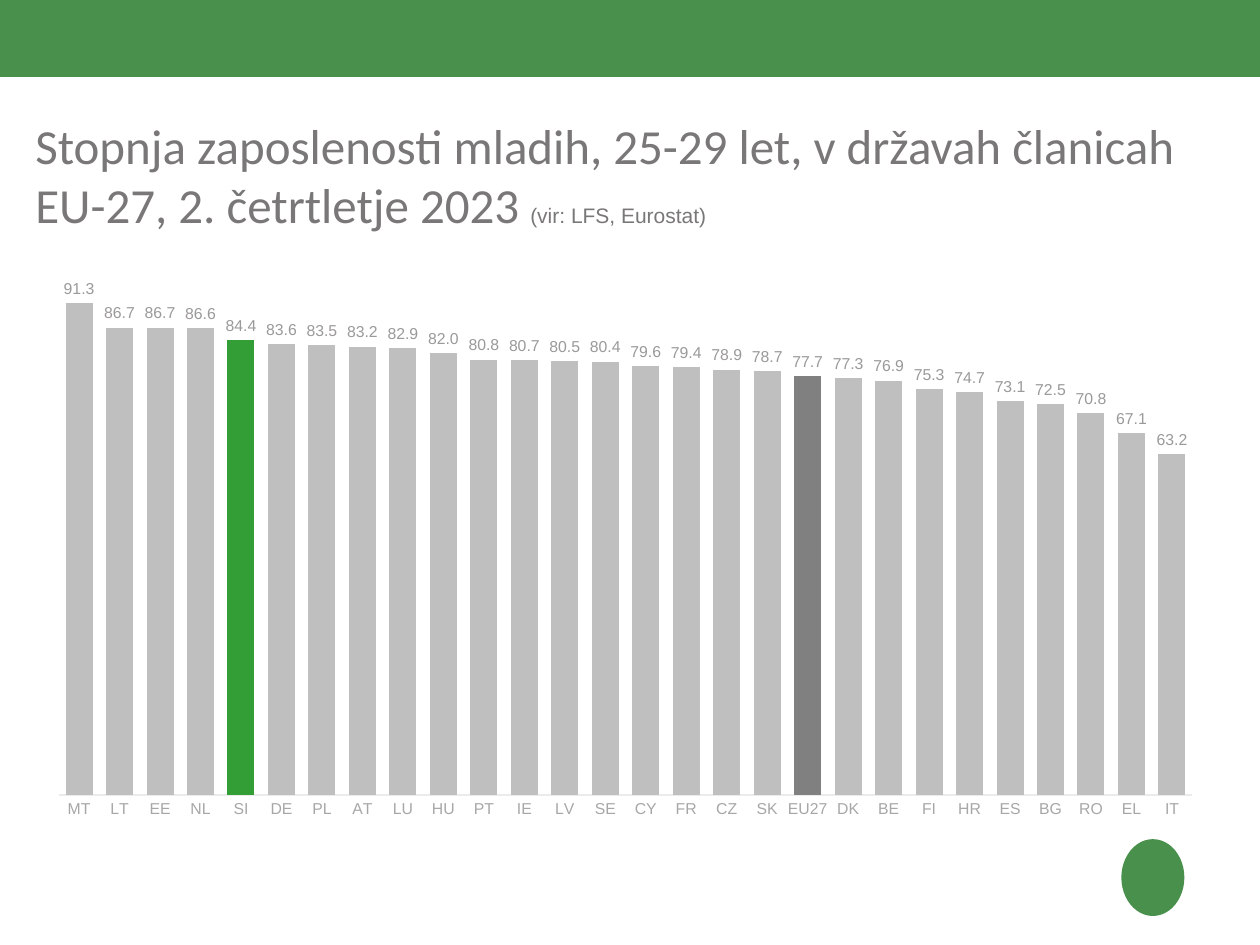
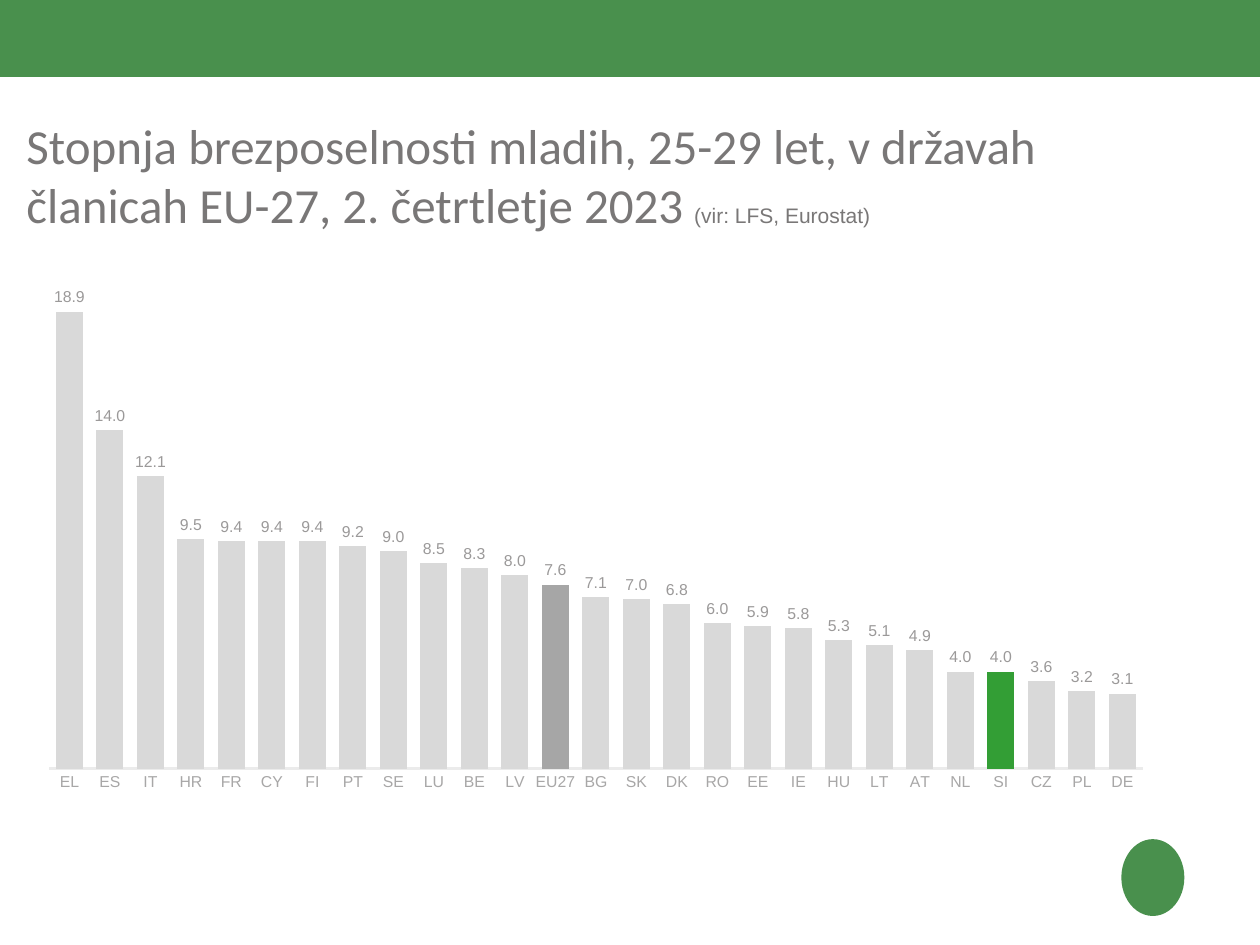
"""Build two slides on youth employment and unemployment rates in the EU-27."""
from lxml import etree
from pptx import Presentation
from pptx.chart.data import CategoryChartData
from pptx.dml.color import RGBColor
from pptx.enum.chart import XL_CHART_TYPE as ChartType
from pptx.enum.chart import XL_LABEL_POSITION as LabelPosition
from pptx.enum.chart import XL_TICK_LABEL_POSITION as TickLabels
from pptx.enum.chart import XL_TICK_MARK as TickMark
from pptx.enum.shapes import MSO_SHAPE as Shape
from pptx.enum.text import MSO_ANCHOR as Anchor
from pptx.enum.text import MSO_AUTO_SIZE as AutoSize
from pptx.enum.text import PP_ALIGN as Align
from pptx.oxml import parse_xml
from pptx.oxml.ns import nsdecls, qn
from pptx.util import Inches, Pt

COLORS = {
    "brand": "49904D",
    "text": "797777",
    "value": "9B9999",
    "country": "A8A7A7",
    "baseline": "EBEBEB",
    "slovenia": "339E35",
}
RATE_FORMAT = "#,##0.0"
SOURCE = "(vir: LFS, Eurostat)"
BAND_AREA = (0, 0, 100, 8.13)
EMBLEM_AREA = (89, 88.8, 5, 8.13)
PLOT_AREA = {"x": 0.02, "y": 0.02, "w": 0.96, "h": 0.92}

TITLE_FRAME = {
    "margin_left": 0, "margin_right": 0, "margin_top": 0, "margin_bottom": 0,
    "word_wrap": True, "auto_size": AutoSize.NONE, "vertical_anchor": Anchor.TOP,
}
COLUMNS = {"gap_width": 50, "overlap": -27, "vary_by_categories": False}
RATE_LABELS = {
    "show_value": True, "number_format": RATE_FORMAT,
    "number_format_is_linked": False, "position": LabelPosition.OUTSIDE_END,
}
PLAIN_AXIS = {
    "major_tick_mark": TickMark.NONE, "minor_tick_mark": TickMark.NONE,
    "has_major_gridlines": False,
}
RATE_AXIS = PLAIN_AXIS | {
    "minimum_scale": 0, "tick_label_position": TickLabels.NONE,
}

TOPICS = [
    {
        "title": "Stopnja zaposlenosti mladih, 25-29 let, v državah članicah "
                 "EU-27, 2. četrtletje 2023 ",
        "title_area": (2.8, 12.27, 92.6, 9.47),
        "chart_area": (2.8, 25.87, 93.7, 62),
        "top_rate": 100,
        "member": "BFBFBF",
        "average": "808080",
        "rates": {
            "MT": 91.3, "LT": 86.7, "EE": 86.7, "NL": 86.6, "SI": 84.4,
            "DE": 83.6, "PL": 83.5, "AT": 83.2, "LU": 82.9, "HU": 82.0,
            "PT": 80.8, "IE": 80.7, "LV": 80.5, "SE": 80.4, "CY": 79.6,
            "FR": 79.4, "CZ": 78.9, "SK": 78.7, "EU27": 77.7, "DK": 77.3,
            "BE": 76.9, "FI": 75.3, "HR": 74.7, "ES": 73.1, "BG": 72.5,
            "RO": 70.8, "EL": 67.1, "IT": 63.2,
        },
    },
    {
        "title": "Stopnja brezposelnosti mladih, 25-29 let, v državah članicah "
                 "EU-27, 2. četrtletje 2023 ",
        "title_area": (2.1, 12.27, 92.6, 9.47),
        "chart_area": (2.1, 29.07, 90.4, 55.6),
        "top_rate": 20,
        "member": "D9D9D9",
        "average": "A6A6A6",
        "rates": {
            "EL": 18.9, "ES": 14.0, "IT": 12.1, "HR": 9.5, "FR": 9.4,
            "CY": 9.4, "FI": 9.4, "PT": 9.2, "SE": 9.0, "LU": 8.5,
            "BE": 8.3, "LV": 8.0, "EU27": 7.6, "BG": 7.1, "SK": 7.0,
            "DK": 6.8, "RO": 6.0, "EE": 5.9, "IE": 5.8, "HU": 5.3,
            "LT": 5.1, "AT": 4.9, "NL": 4.0, "SI": 4.0, "CZ": 3.6,
            "PL": 3.2, "DE": 3.1,
        },
    },
]

deck = Presentation()
deck.slide_width, deck.slide_height = Inches(10), Inches(7.5)
column, row = deck.slide_width / 100, deck.slide_height / 100


def place(area):
    """Turn percentages of the slide into left, top, width and height."""
    return [round(share * unit) for share, unit in zip(area, (column, row) * 2)]


def style(target, formats, color=None):
    """Set every format value, and the colour of a font if one is given."""
    for attribute, value in formats.items():
        setattr(target, attribute, value)
    if color:
        target.color.rgb = RGBColor.from_string(color)


for topic in TOPICS:
    slide = deck.slides.add_slide(deck.slide_layouts[5])

    for outline, area in ((Shape.RECTANGLE, BAND_AREA), (Shape.OVAL, EMBLEM_AREA)):
        ornament = slide.shapes.add_shape(outline, *place(area))
        ornament.shadow.inherit = False
        ornament.fill.solid()
        ornament.fill.fore_color.rgb = RGBColor.from_string(COLORS["brand"])
        ornament.line.fill.background()

    heading = slide.shapes.title
    style(heading, dict(zip(("left", "top", "width", "height"),
                            place(topic["title_area"]))))
    style(heading.text_frame, TITLE_FRAME)
    sentence = heading.text_frame.paragraphs[0]
    sentence.alignment = Align.LEFT
    for words, font_name, size in ((topic["title"], "Calibri", 28),
                                   (SOURCE, "Arial", 12)):
        part = sentence.add_run()
        part.text = words
        style(part.font, {"name": font_name, "size": Pt(size)}, COLORS["text"])

    rates = topic["rates"]
    data = CategoryChartData(number_format=RATE_FORMAT)
    data.categories = list(rates)
    data.add_series("Series 1", list(rates.values()))
    chart = slide.shapes.add_chart(
        ChartType.COLUMN_CLUSTERED, *place(topic["chart_area"]), data).chart
    style(chart, {"has_legend": False, "has_title": False})
    style(chart.font, {"name": "Arial", "size": Pt(10)}, COLORS["text"])

    columns = chart.plots[0]
    style(columns, COLUMNS | {"has_data_labels": True})
    style(columns.data_labels, RATE_LABELS)
    countries, scale = chart.category_axis, chart.value_axis
    style(countries, PLAIN_AXIS)
    style(scale, RATE_AXIS | {"maximum_scale": topic["top_rate"]})
    scale.format.line.fill.background()
    style(countries.format.line, {"width": Pt(1.5)}, COLORS["baseline"])
    for font, role in ((columns.data_labels.font, "value"),
                       (countries.tick_labels.font, "country")):
        style(font, {"name": "Arial", "size": Pt(9)}, COLORS[role])

    members = columns.series[0]
    highlights = {"SI": COLORS["slovenia"], "EU27": topic["average"]}
    fills = [(members, topic["member"])]
    fills += [(members.points[list(rates).index(code)], color)
              for code, color in highlights.items()]
    for bar, color in fills:
        bar.format.fill.solid()
        bar.format.fill.fore_color.rgb = RGBColor.from_string(color)

    plot_area = chart.element.find(".//" + qn("c:plotArea"))
    for automatic in plot_area.findall(qn("c:layout")):
        plot_area.remove(automatic)
    layout = parse_xml(f"<c:layout {nsdecls('c')}><c:manualLayout/></c:layout>")
    settings = {"layoutTarget": "inner", "xMode": "edge", "yMode": "edge"} | PLOT_AREA
    for tag, value in settings.items():
        etree.SubElement(layout[0], qn("c:" + tag)).set("val", str(value))
    plot_area.insert(0, layout)

deck.save("out.pptx")
